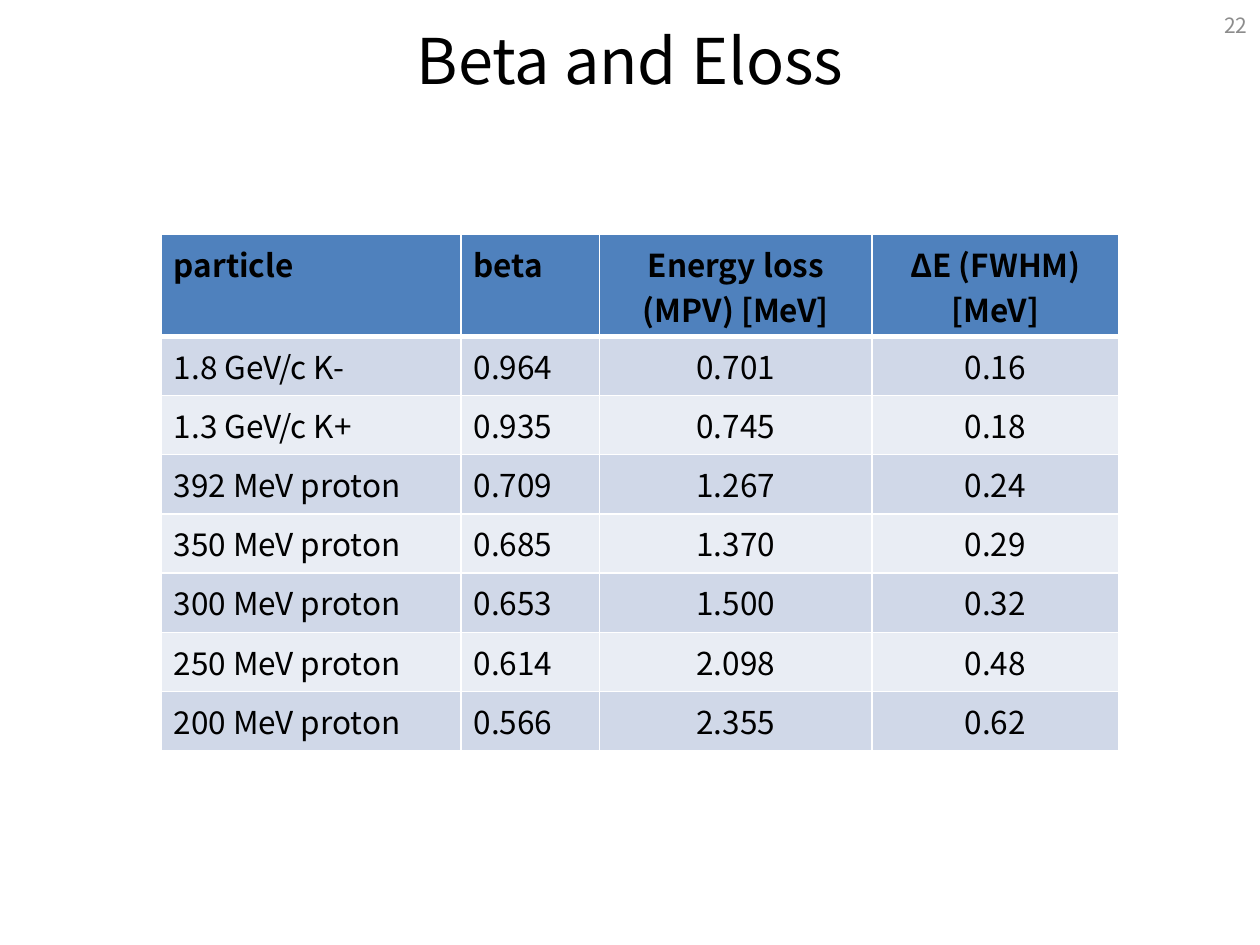
from lxml import etree
from pptx import Presentation
from pptx.dml.color import RGBColor
from pptx.enum.text import MSO_ANCHOR, PP_ALIGN
from pptx.oxml.ns import qn
from pptx.util import Inches, Pt

LEFT, CENTER, RIGHT = PP_ALIGN.LEFT, PP_ALIGN.CENTER, PP_ALIGN.RIGHT
MIDDLE = MSO_ANCHOR.MIDDLE

FONT = "Noto Sans CJK JP"
COLORS = {
    "text": "000000",
    "number": "8C8C8C",
    "header": "4F81BD",
    "odd": "D0D8E8",
    "even": "E9EDF4",
    "border": "FFFFFF",
}

COL_WIDTHS = [2.38, 1.1, 2.16, 1.96]
COL_ALIGNS = [LEFT, LEFT, CENTER, CENTER]
HEADER_HEIGHT, ROW_HEIGHT = 0.81, 0.47
ROWS = [
    ("particle", "beta", "Energy loss (MPV) [MeV]", "ΔE (FWHM) [MeV]"),
    ("1.8 GeV/c K-", "0.964", "0.701", "0.16"),
    ("1.3 GeV/c K+", "0.935", "0.745", "0.18"),
    ("392 MeV proton", "0.709", "1.267", "0.24"),
    ("350 MeV proton", "0.685", "1.370", "0.29"),
    ("300 MeV proton", "0.653", "1.500", "0.32"),
    ("250 MeV proton", "0.614", "2.098", "0.48"),
    ("200 MeV proton", "0.566", "2.355", "0.62"),
]


def style_paragraph(p, size, color, align, bold=False):
    p.alignment = align
    p.font.name = FONT
    p.font.size = Pt(size)
    p.font.bold = bold
    p.font.color.rgb = RGBColor.from_string(COLORS[color])


def add_text(s, box, text, size, color, align):
    tf = s.shapes.add_textbox(*map(Inches, box)).text_frame
    tf.word_wrap = True
    tf.vertical_anchor = MIDDLE
    p = tf.paragraphs[0]
    p.text = text
    style_paragraph(p, size, color, align)


def set_borders(cell, top, bottom):
    """Draw the four cell borders; call before the fill is set."""
    tcPr = cell._tc.get_or_add_tcPr()
    for side, width in (("L", 1), ("R", 1), ("T", top), ("B", bottom)):
        ln = etree.SubElement(tcPr, qn(f"a:ln{side}"), w=str(Pt(width)))
        fill = etree.SubElement(ln, qn("a:solidFill"))
        etree.SubElement(fill, qn("a:srgbClr"), val=COLORS["border"])


def add_particle_table(s, left, top):
    width = sum(COL_WIDTHS)
    height = HEADER_HEIGHT + ROW_HEIGHT * (len(ROWS) - 1)
    table = s.shapes.add_table(len(ROWS), len(COL_WIDTHS), Inches(left),
                               Inches(top), Inches(width), Inches(height)).table
    for column, col_width in zip(table.columns, COL_WIDTHS):
        column.width = Inches(col_width)

    for i, values in enumerate(ROWS):
        header = i == 0
        table.rows[i].height = Inches(HEADER_HEIGHT if header else ROW_HEIGHT)
        fill = "header" if header else ("odd" if i % 2 else "even")
        for j, value in enumerate(values):
            cell = table.cell(i, j)
            # A thick rule separates the header from the body
            set_borders(cell, 3 if i == 1 else 1, 3 if header else 1)
            cell.fill.solid()
            cell.fill.fore_color.rgb = RGBColor.from_string(COLORS[fill])
            p = cell.text_frame.paragraphs[0]
            p.text = value
            style_paragraph(p, 18, "text", COL_ALIGNS[j], bold=header)


def main():
    prs = Presentation()
    prs.slide_width, prs.slide_height = Inches(10), Inches(7.5)
    s = prs.slides.add_slide(prs.slide_layouts[6])

    # Page number and title
    add_text(s, (9.5, 0, 0.5, 0.4), "22", 12, "number", RIGHT)
    add_text(s, (0.5, 0.01, 9, 0.93), "Beta and Eloss", 36, "text", CENTER)

    # Energy loss by particle
    add_particle_table(s, 1.28, 1.86)

    prs.save("out.pptx")


if __name__ == "__main__":
    main()
